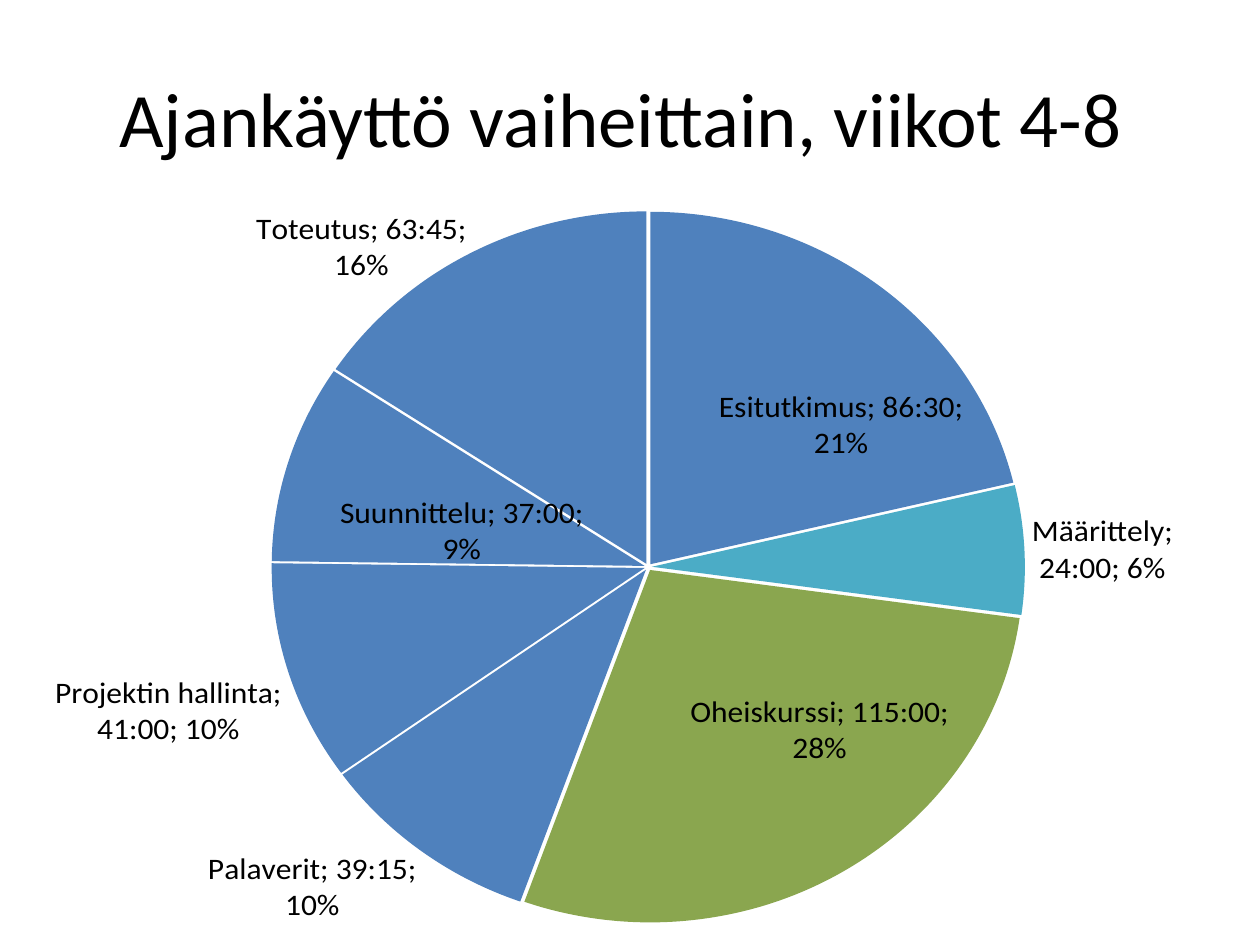
from copy import deepcopy
from dataclasses import dataclass

from lxml import etree
from pptx import Presentation
from pptx import util as u
from pptx.chart import data as chart_data
from pptx.dml.color import RGBColor
from pptx.enum import chart as charts, text
from pptx.oxml import ns


@dataclass(frozen=True)
class Theme:
    font: str = "Calibri"
    ink: str = "000000"
    blue: str = "4F81BD"
    teal: str = "4BACC6"
    green: str = "8AA64F"
    title_size: int = 44
    label_size: int = 18


@dataclass(frozen=True)
class Phase:
    name: str
    hours: float
    color: str
    label_shift: tuple[float, float] | None = None  # fractions of the chart frame


THEME = Theme()
PHASES = [
    Phase("Esitutkimus", 86.5, THEME.blue),
    Phase("Määrittely", 24, THEME.teal),
    Phase("Oheiskurssi", 115, THEME.green),
    Phase("Palaverit", 39.25, THEME.blue),
    Phase("Projektin hallinta", 41, THEME.blue),
    Phase("Suunnittelu", 37, THEME.blue, label_shift=(0.24, 0.15)),
    Phase("Toteutus", 63.75, THEME.blue),
]
CHART_WIDTH, PLOT_LEFT, PLOT_WIDTH = 10, 2.13, 6.03  # inches
HOUR_FORMAT = "[h]:mm"
HOURS_PER_DAY = 24  # the hour format counts in days


def style_font(font, size: int) -> None:
    font.name = THEME.font
    font.size = u.Pt(size)
    font.color.rgb = RGBColor.from_string(THEME.ink)


def add_title(page, words: str) -> None:
    box = page.shapes.add_textbox(u.Inches(0.5), u.Inches(0.3), u.Inches(9), u.Inches(1.25))
    frame = box.text_frame
    frame.word_wrap = True
    frame.vertical_anchor = text.MSO_ANCHOR.MIDDLE
    para = frame.paragraphs[0]
    para.text = words
    para.alignment = text.PP_ALIGN.CENTER
    style_font(para.font, THEME.title_size)


def manual_layout(**settings):
    layout = etree.Element(ns.qn("c:layout"))
    manual = etree.SubElement(layout, ns.qn("c:manualLayout"))
    for tag, value in settings.items():
        etree.SubElement(manual, ns.qn(f"c:{tag}")).set("val", str(value))
    return layout


def set_plot_area(chart) -> None:
    area = chart.plots[0]._element.getparent()
    for old in area.findall(ns.qn("c:layout")):
        area.remove(old)
    area.insert(0, manual_layout(
        layoutTarget="inner", xMode="edge", yMode="edge",
        x=PLOT_LEFT / CHART_WIDTH, y=0, w=PLOT_WIDTH / CHART_WIDTH, h=1,
    ))


def set_explosion(series, percent: int) -> None:
    explosion = etree.Element(ns.qn("c:explosion"))
    explosion.set("val", str(percent))
    series._element.find(ns.qn("c:tx")).addnext(explosion)


def add_labels(series, phases: list[Phase]) -> None:
    labels = series.data_labels
    labels.number_format = HOUR_FORMAT
    labels.number_format_is_linked = True  # keeps the percentages as percentages
    labels.show_category_name = True
    labels.show_value = True
    labels.show_percentage = True
    labels.position = charts.XL_LABEL_POSITION.BEST_FIT
    style_font(labels.font, THEME.label_size)
    group = labels._element
    separator = etree.Element(ns.qn("c:separator"))
    separator.text = "; "
    group.find(ns.qn("c:showBubbleSize")).addnext(separator)

    # Labels moved from their automatic place share all other settings
    shared = [part for part in group if part.tag != ns.qn("c:showLeaderLines")]
    moved = [(i, phase) for i, phase in enumerate(phases) if phase.label_shift]
    for position, (index, phase) in enumerate(moved):
        label = etree.Element(ns.qn("c:dLbl"))
        etree.SubElement(label, ns.qn("c:idx")).set("val", str(index))
        shift_x, shift_y = phase.label_shift
        label.append(manual_layout(x=shift_x, y=shift_y))
        label.extend(deepcopy(part) for part in shared)
        group.insert(position, label)


def add_pie(page, phases: list[Phase]) -> None:
    data = chart_data.CategoryChartData(number_format=HOUR_FORMAT)
    data.categories = [phase.name for phase in phases]
    data.add_series("Series 1", [round(phase.hours / HOURS_PER_DAY, 6) for phase in phases])
    chart = page.shapes.add_chart(
        charts.XL_CHART_TYPE.PIE,
        u.Inches(0), u.Inches(1.39), u.Inches(CHART_WIDTH), u.Inches(5.98), data,
    ).chart
    chart.has_legend = False
    chart.has_title = False
    style_font(chart.font, THEME.label_size)
    plot = chart.plots[0]
    plot.vary_by_categories = True
    series = plot.series[0]
    for index, phase in enumerate(phases):
        fill = series.points[index].format.fill
        fill.solid()
        fill.fore_color.rgb = RGBColor.from_string(phase.color)
    set_explosion(series, 1)
    add_labels(series, phases)
    set_plot_area(chart)


def main() -> None:
    deck = Presentation()
    deck.slide_width, deck.slide_height = u.Inches(10), u.Inches(7.5)
    page = deck.slides.add_slide(deck.slide_layouts[6])
    # Heading
    add_title(page, "Ajankäyttö vaiheittain, viikot 4-8 ")
    # Hours spent on each phase
    add_pie(page, PHASES)
    deck.save("out.pptx")


if __name__ == "__main__":
    main()
